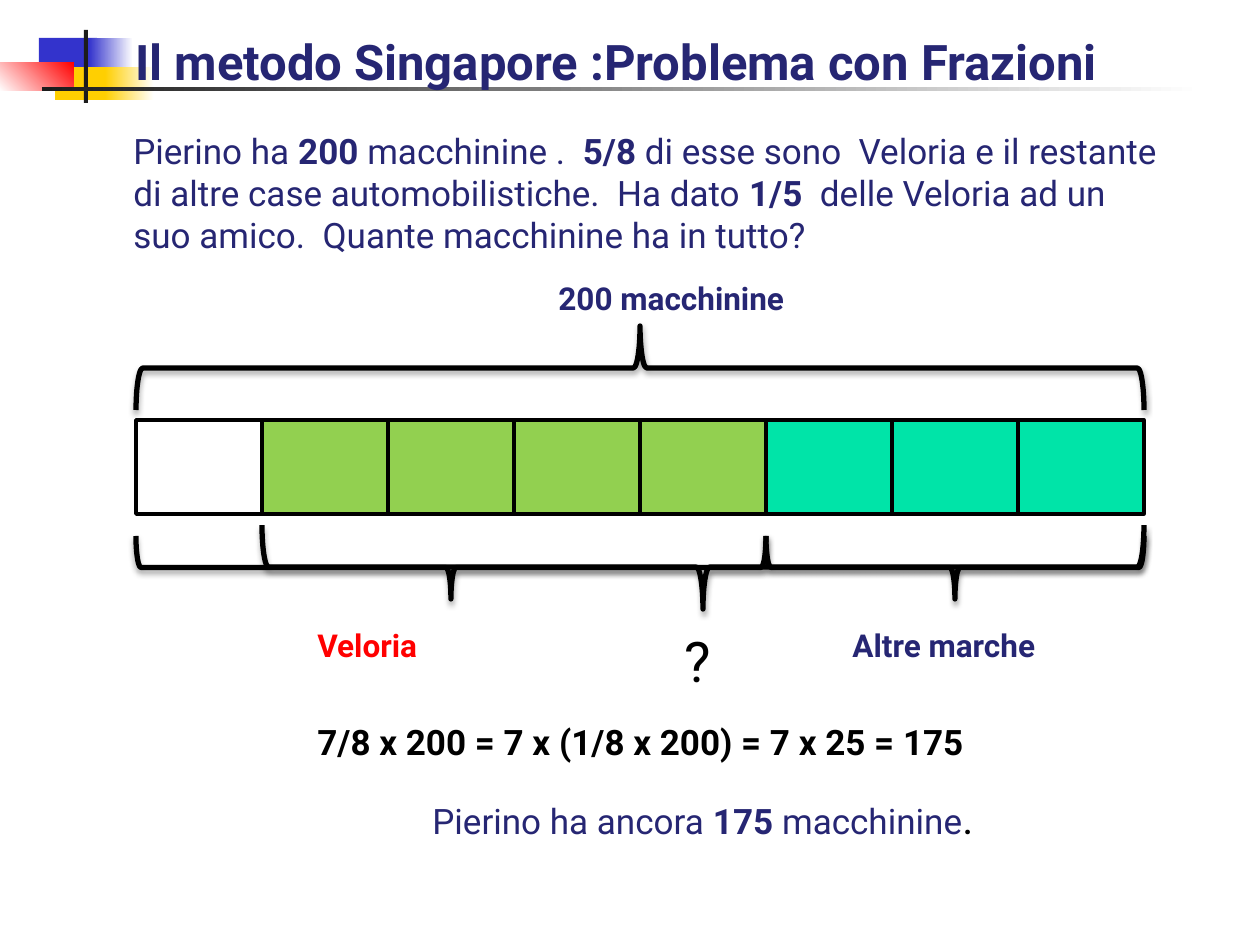
import pptx
import pptx.util
import pptx.dml.color
import pptx.enum.shapes
import pptx.enum.text
import pptx.oxml

SHAPE = pptx.enum.shapes.MSO_SHAPE
EMU_PER_PX = 914400 / 126
NAVY, BLACK, WHITE, RED = "262673", "000000", "FFFFFF", "FF0000"
GREEN, TEAL, BLUE, GOLD, DARK = "92D050", "00E4A8", "3333CC", "FFCF01", "1C1C1C"

# Bar model: one colour per eighth
CELLS = [WHITE] + [GREEN] * 4 + [TEAL] * 3
BAR_LEFT, BAR_TOP, CELL_W, CELL_H = 136, 420, 126, 94

# first cell, number of cells, top, height, rotation, curl of the ends
BRACES = [
    (0, 8, 326, 84, 90, 0.08),
    (0, 5, 536, 63, 270, 0.08),
    (5, 3, 536, 63, 270, 0.08),
    (1, 7, 525, 84, 270, 0.08),
]

# box, (colour or gradient ends), gradient angle
ORNAMENTS = [
    ((39, 38, 58, 33), (BLUE,), 0),
    ((89, 38, 44, 33), (BLUE, WHITE), 0),
    ((55, 67, 57, 33), (GOLD,), 0),
    ((105, 67, 49, 33), (GOLD, WHITE), 0),
    ((0, 62, 74, 29), (WHITE, RED), 45),
    ((84, 30, 4, 73), (DARK,), 0),
    ((42, 87, 1160, 4), (DARK, WHITE), 0),
]

# box, then runs: text, size, colour, bold
TEXTS = [
    ((546, 273, 344, 50), [("200 macchinine", 18, NAVY, True)]),
    ((305, 620, 305, 50), [("Veloria", 18, RED, True)]),
    ((840, 620, 231, 50), [("Altre marche", 18, NAVY, True)]),
    ((672, 620, 84, 81), [("?", 32, BLACK, False)]),
    ((305, 714, 854, 55), [("7/8 x 200 = 7 x (1/8 x 200) = 7 x 25 = 175", 20, BLACK, True)]),
    ((420, 786, 708, 63), [
        ("Pierino ha ancora", 20, NAVY, False),
        (" 175 ", 20, NAVY, True),
        ("macchinine", 20, NAVY, False),
        (".", 24, BLACK, False),
    ]),
    ((121, 123, 1061, 140), [
        ("Pierino ha ", 20, NAVY, False),
        ("200 ", 20, NAVY, True),
        ("macchinine .  ", 20, NAVY, False),
        ("5/8 ", 20, NAVY, True),
        ("di esse sono  Veloria e il restante di altre case automobilistiche.  Ha dato ",
         20, NAVY, False),
        ("1/5  ", 20, NAVY, True),
        ("delle Veloria ad un suo amico.  Quante macchinine ha in tutto?", 20, NAVY, False),
    ]),
    ((123, 25, 1137, 72), [("Il metodo Singapore :Problema con Frazioni", 28, NAVY, True)]),
]

SHADOW = (
    '<a:effectLst xmlns:a="http://schemas.openxmlformats.org/drawingml/2006/main">'
    '<a:outerShdw blurRad="40000" dist="23000" dir="5400000" rotWithShape="0">'
    '<a:srgbClr val="000000"><a:alpha val="35000"/></a:srgbClr>'
    '</a:outerShdw></a:effectLst>'
)


def px(n):
    return pptx.util.Emu(round(n * EMU_PER_PX))


def rgb(value):
    return pptx.dml.color.RGBColor.from_string(value)


def set_all(obj, values):
    for name, value in values.items():
        setattr(obj, name, value)


def add_shape(shapes, kind, box, line_width=0):
    sp = shapes.add_shape(kind, *map(px, box))
    sp.shadow.inherit = False
    if line_width:
        sp.line.color.rgb = rgb(BLACK)
        sp.line.width = pptx.util.Pt(line_width)
    else:
        sp.line.fill.background()
    return sp


def paint(sp, colors, angle=0):
    """Fill with one colour, or with a linear gradient between two."""
    if len(colors) == 1:
        sp.fill.solid()
        sp.fill.fore_color.rgb = rgb(colors[0])
        return
    sp.fill.gradient()
    sp.fill.gradient_angle = angle
    for stop, color in zip(sp.fill.gradient_stops, colors):
        stop.color.rgb = rgb(color)


def add_brace(shapes, first, count, top, height, rotation, curl):
    """Turn an upright brace so that it spans count cells of the bar."""
    width = count * CELL_W
    center_x = BAR_LEFT + first * CELL_W + width / 2
    center_y = top + height / 2
    box = (center_x - height / 2, center_y - width / 2, height, width)
    sp = add_shape(shapes, SHAPE.LEFT_BRACE, box, 3)
    sp.fill.background()
    sp.rotation = rotation
    sp.adjustments[0] = curl
    sp_pr = sp._element.spPr
    sp_pr.replace(sp_pr[-1], pptx.oxml.parse_xml(SHADOW))


def add_text(shapes, box, runs):
    tf = shapes.add_textbox(*map(px, box)).text_frame
    set_all(tf, {"word_wrap": True,
                 "auto_size": pptx.enum.text.MSO_AUTO_SIZE.SHAPE_TO_FIT_TEXT})
    p = tf.paragraphs[0]
    for text, size, color, bold in runs:
        r = p.add_run()
        r.text = text
        set_all(r.font, {"name": "Roboto", "size": pptx.util.Pt(size), "bold": bold})
        r.font.color.rgb = rgb(color)


def main():
    prs = pptx.Presentation()
    set_all(prs, {"slide_width": px(1260), "slide_height": px(945)})
    s = prs.slides.add_slide(prs.slide_layouts[6])

    ornament = s.shapes.add_group_shape()
    for box, colors, angle in ORNAMENTS:
        paint(add_shape(ornament.shapes, SHAPE.RECTANGLE, box), colors, angle)

    for i, color in enumerate(CELLS):
        box = (BAR_LEFT + i * CELL_W, BAR_TOP, CELL_W, CELL_H)
        paint(add_shape(s.shapes, SHAPE.RECTANGLE, box, 2), (color,))

    for brace in BRACES:
        add_brace(s.shapes, *brace)
    for box, runs in TEXTS:
        add_text(s.shapes, box, runs)

    prs.save("out.pptx")


if __name__ == "__main__":
    main()
